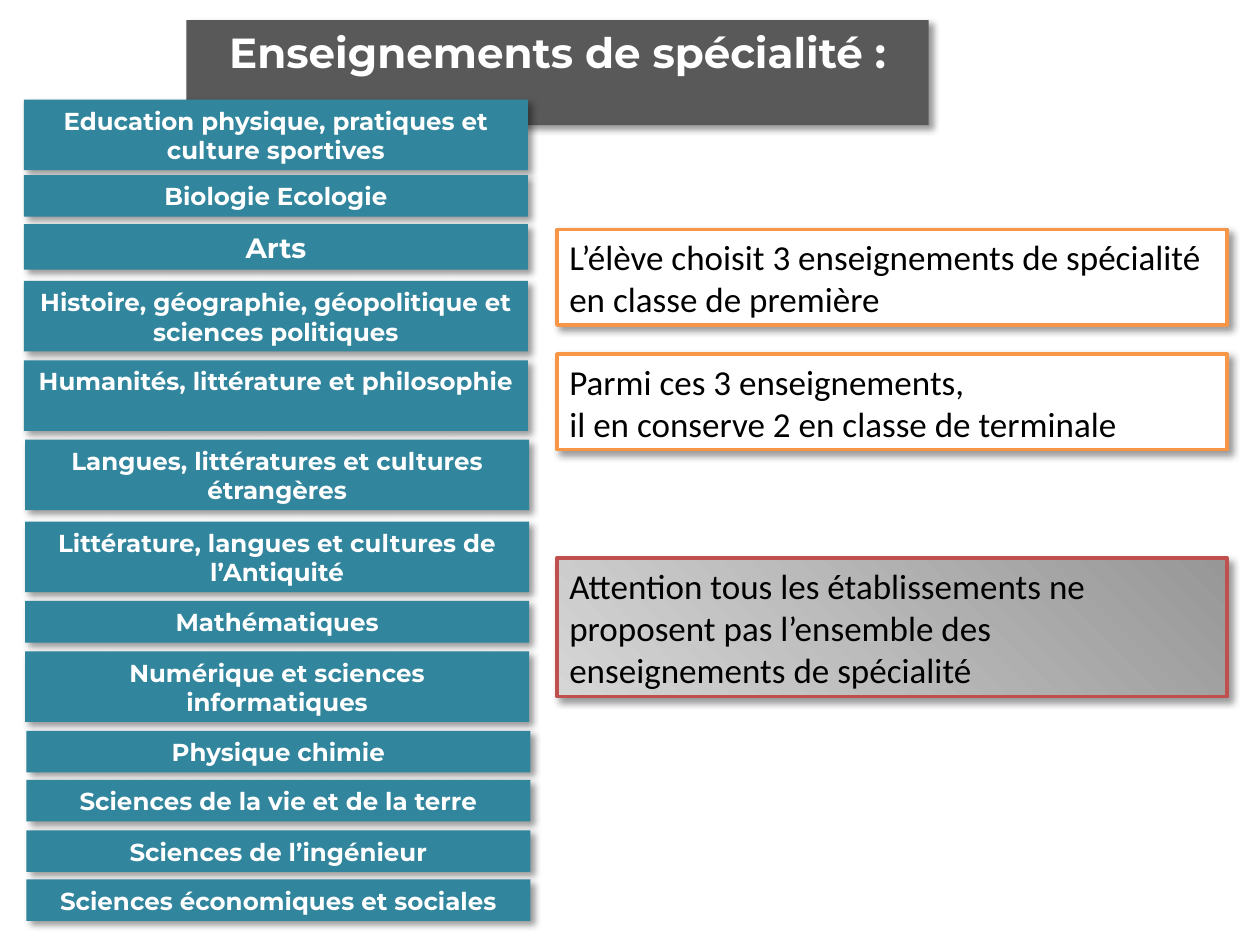
from pptx import Presentation
from pptx.dml.color import RGBColor
from pptx.enum.text import MSO_ANCHOR, MSO_AUTO_SIZE, PP_ALIGN
from pptx.oxml import parse_xml
from pptx.oxml.ns import nsdecls, qn
from pptx.util import Inches, Pt

CENTER = PP_ALIGN.CENTER
LEFT = PP_ALIGN.LEFT
TOP = MSO_ANCHOR.TOP
FIT_SHAPE = MSO_AUTO_SIZE.SHAPE_TO_FIT_TEXT
TITLE_ONLY = 5

ONE_LINE, TWO_LINES = 0.33, 0.56
SUBJECTS = [
    ("Education physique, pratiques et culture sportives", 0.19, 0.79, TWO_LINES, 14),
    ("Biologie Ecologie", 0.19, 1.39, ONE_LINE, 14),
    ("Arts", 0.19, 1.78, 0.36, 16),
    ("Histoire, géographie, géopolitique et sciences politiques", 0.19, 2.23, TWO_LINES, 14),
    ("Humanités, littérature et philosophie", 0.19, 2.86, TWO_LINES, 14),
    ("Langues, littératures et cultures étrangères", 0.2, 3.49, TWO_LINES, 14),
    ("Littérature, langues et cultures de l’Antiquité", 0.2, 4.14, TWO_LINES, 14),
    ("Mathématiques", 0.2, 4.77, ONE_LINE, 14),
    ("Numérique et sciences informatiques", 0.2, 5.17, TWO_LINES, 14),
    ("Physique chimie", 0.21, 5.8, ONE_LINE, 14),
    ("Sciences de la vie et de la terre", 0.21, 6.19, ONE_LINE, 14),
    ("Sciences de l’ingénieur", 0.21, 6.59, ONE_LINE, 14),
    ("Sciences économiques et sociales", 0.21, 6.98, ONE_LINE, 14),
]


def color(value):
    return RGBColor.from_string(value)


def write_text(shape, text, size, font, text_color, bold=False, align=LEFT):
    frame = shape.text_frame
    frame.word_wrap = True
    frame.auto_size = FIT_SHAPE
    frame.vertical_anchor = TOP
    frame.text = text
    for paragraph in frame.paragraphs:
        paragraph.alignment = align
        for run in paragraph.runs:
            run.font.size = Pt(size)
            run.font.name = font
            run.font.bold = bold
            run.font.color.rgb = color(text_color)


class SpecialtySlide:
    heading_font = "Montserrat"
    body_font = "Calibri"
    title_fill = "595959"
    subject_fill = "31859C"
    light = "FFFFFF"
    dark = "000000"

    def __init__(self, presentation):
        self.slide = presentation.slides.add_slide(presentation.slide_layouts[TITLE_ONLY])

    def add_shadow(self, shape):
        shape.shadow.inherit = False
        effects = shape.element.spPr.find(qn("a:effectLst"))
        effects.append(parse_xml(
            f'<a:outerShdw {nsdecls("a")} blurRad="{Pt(4)}" dist="{Pt(3)}" '
            'dir="2700000" algn="tl" rotWithShape="0">'
            f'<a:srgbClr val="{self.dark}"><a:alpha val="40000"/></a:srgbClr>'
            '</a:outerShdw>'
        ))

    def add_heading_style(self, shape, text, size, fill):
        shape.fill.solid()
        shape.fill.fore_color.rgb = color(fill)
        self.add_shadow(shape)
        write_text(shape, text, size=size, font=self.heading_font,
                   text_color=self.light, bold=True, align=CENTER)

    def add_title(self, text):
        title = self.slide.shapes.title
        title.left, title.top = Inches(1.48), Inches(0.16)
        title.width, title.height = Inches(5.89), Inches(0.5)
        self.add_heading_style(title, text, 24, self.title_fill)

    def add_subject(self, text, left, top, height, size):
        box = self.slide.shapes.add_textbox(
            Inches(left), Inches(top), Inches(4), Inches(height))
        self.add_heading_style(box, text, size, self.subject_fill)

    def add_note(self, text, top, height, border, gradient=None):
        box = self.slide.shapes.add_textbox(
            Inches(4.42), Inches(top), Inches(5.32), Inches(height))
        if gradient:
            box.fill.gradient()
            box.fill.gradient_angle = 225
            for stop, value in zip(box.fill.gradient_stops, gradient):
                stop.color.rgb = color(value)
        else:
            box.fill.solid()
            box.fill.fore_color.rgb = color(self.light)
        box.line.color.rgb = color(border)
        box.line.width = Pt(2)
        self.add_shadow(box)
        write_text(box, text, size=20, font=self.body_font, text_color=self.dark)


def main():
    presentation = Presentation()
    presentation.slide_width = Inches(10)
    presentation.slide_height = Inches(7.5)
    page = SpecialtySlide(presentation)
    page.add_title("Enseignements de spécialité :")
    for subject in SUBJECTS:
        page.add_subject(*subject)
    page.add_note("L’élève choisit 3 enseignements de spécialité en classe de première",
                  1.82, 0.76, "F79646")
    page.add_note("Parmi ces 3 enseignements,\nil en conserve 2 en classe de terminale",
                  2.81, 0.76, "F79646")
    page.add_note("Attention tous les établissements ne proposent pas l’ensemble "
                  "des enseignements de spécialité",
                  4.43, 1.1, "C0504D", gradient=("979797", "D6D6D6"))
    presentation.save("out.pptx")


if __name__ == "__main__":
    main()
